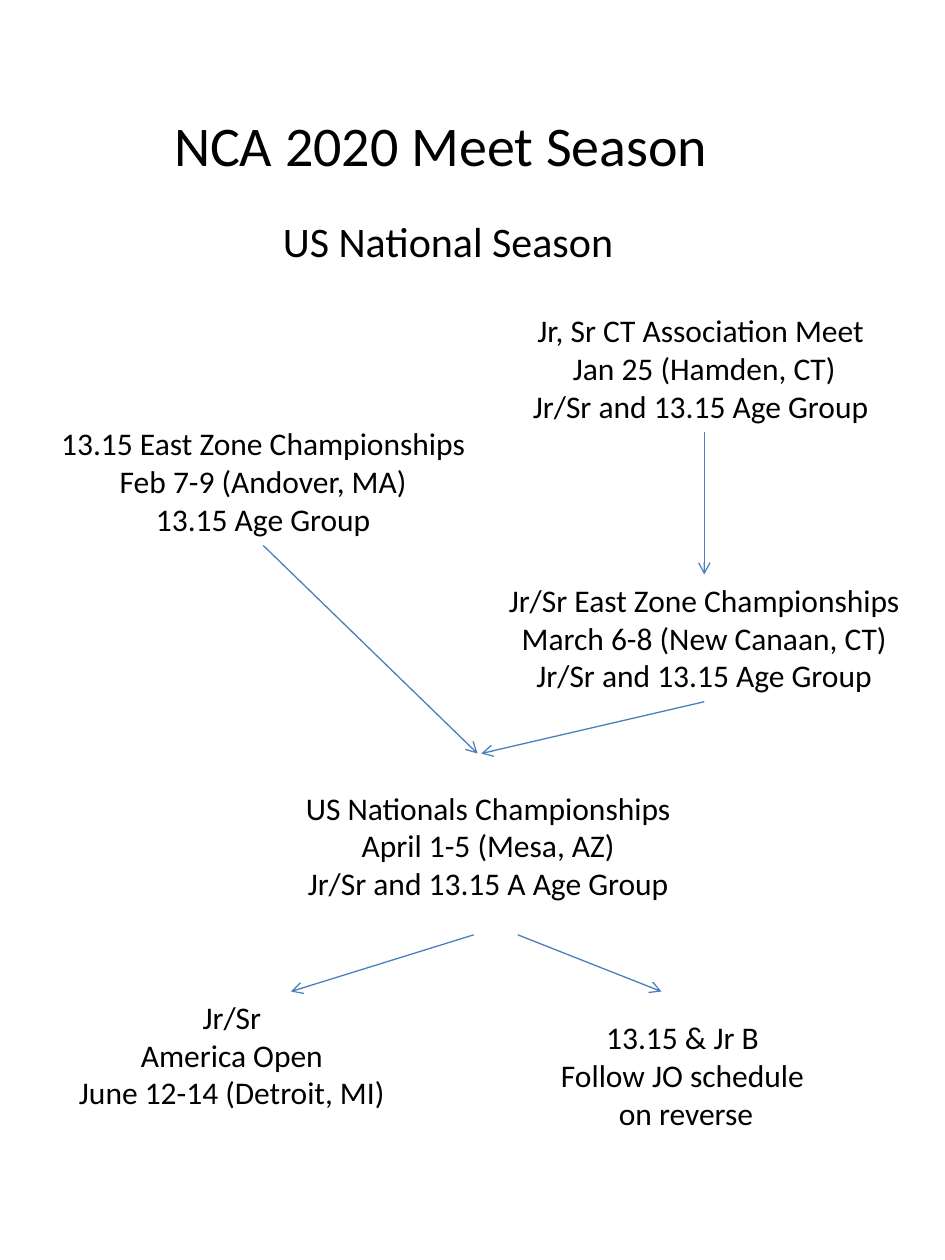
from lxml import etree
from pptx import Presentation
from pptx.dml.color import RGBColor
from pptx.enum.shapes import MSO_CONNECTOR
from pptx.enum.text import MSO_AUTO_SIZE, PP_ALIGN
from pptx.oxml.ns import qn
from pptx.util import Pt

STRAIGHT = MSO_CONNECTOR.STRAIGHT
CENTER = PP_ALIGN.CENTER
GROW = MSO_AUTO_SIZE.SHAPE_TO_FIT_TEXT
TOP, BOTTOM = 0, 2

COLORS = {"text": "000000", "arrow": "4B7EBC"}
FONT = "Calibri"
# Text size -> height of a box for one heading or one meet
HEIGHTS = {32: 46.1, 24: 36, 18: 72.7}

# Name: (left, top, width, text size, lines)
TEXTS = {
    "title": (90.7, 59.8, 329.8, 32, ["NCA 2020 Meet Season "]),
    "subtitle": (153.4, 119.5, 205.2, 24, ["US National Season"]),
    "association": (295.9, 174.2, 213.1, 18, [
        "Jr, Sr CT Association Meet ", "Jan 25 (Hamden, CT)", "Jr/Sr and 13.15 Age Group "]),
    "age group zone": (26.6, 239, 247.7, 18, [
        "13.15 East Zone Championships", "Feb 7-9 (Andover, MA)", "13.15 Age Group"]),
    "junior senior zone": (282.2, 328.3, 240.5, 18, [
        "Jr/Sr East Zone Championships", "March 6-8 (New Canaan, CT)", "Jr/Sr and 13.15 Age Group"]),
    "nationals": (166.3, 447.1, 225.4, 18, [
        "US Nationals Championships", "April 1-5 (Mesa, AZ)", "Jr/Sr and 13.15 A Age Group"]),
    "open": (34.6, 566.6, 195.8, 18, ["Jr/Sr", "America Open", "June 12-14 (Detroit, MI)"]),
    "reverse": (312.5, 578.2, 159.1, 18, ["13.15 & Jr B ", "Follow JO schedule ", "on reverse"]),
}

# Each end is a box name (joined to the box) or a free point
ARROWS = [
    ("association", "junior senior zone"),
    ("age group zone", (272.9, 430.6)),
    ("junior senior zone", (275, 430.6)),
    ((295.9, 534.2), (378, 566.6)),
    ((270.7, 534.2), (166.3, 566.6)),
]


def add_text(page, left, top, width, size, lines):
    box = page.shapes.add_textbox(Pt(left), Pt(top), Pt(width), Pt(HEIGHTS[size]))
    frame = box.text_frame
    frame.word_wrap = False
    frame.auto_size = GROW
    for index, line in enumerate(lines):
        para = frame.paragraphs[0] if index == 0 else frame.add_paragraph()
        para.alignment = CENTER
        span = para.add_run()
        span.text = line
        for name, value in {"name": FONT, "size": Pt(size)}.items():
            setattr(span.font, name, value)
        span.font.color.rgb = RGBColor.from_string(COLORS["text"])
    return box


def add_arrow(page, boxes, start, end):
    points = [(0, 0) if isinstance(spot, str) else spot for spot in (start, end)]
    arrow = page.shapes.add_connector(
        STRAIGHT, *[Pt(value) for point in points for value in point])
    if start in boxes:
        arrow.begin_connect(boxes[start], BOTTOM)
    if end in boxes:
        arrow.end_connect(boxes[end], TOP)
    arrow.line.width = Pt(0.75)
    arrow.line.color.rgb = RGBColor.from_string(COLORS["arrow"])
    # Open arrowhead, no shadow
    properties = arrow.line._get_or_add_ln()
    etree.SubElement(properties, qn("a:tailEnd"), type="arrow")
    etree.SubElement(properties.getparent(), qn("a:effectLst"))


def main():
    deck = Presentation()
    deck.slide_width, deck.slide_height = Pt(540), Pt(720)
    page = deck.slides.add_slide(deck.slide_layouts[6])
    boxes = {name: add_text(page, *content) for name, content in TEXTS.items()}
    for start, end in ARROWS:
        add_arrow(page, boxes, start, end)
    deck.save("out.pptx")


if __name__ == "__main__":
    main()
